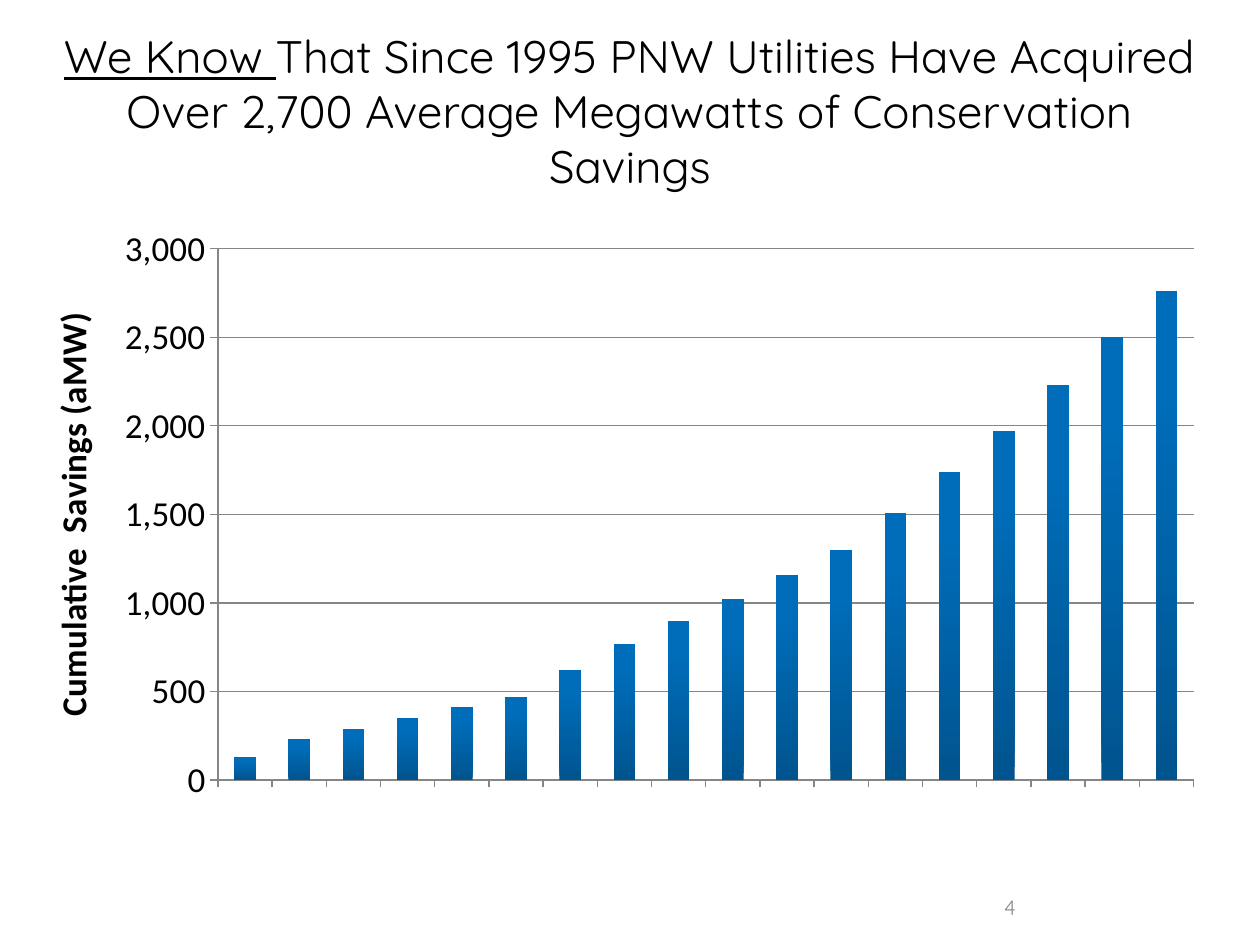
from copy import deepcopy
from typing import NamedTuple

from pptx import Presentation
from pptx.chart.data import CategoryChartData
from pptx.dml.color import RGBColor
from pptx.enum.chart import XL_CHART_TYPE, XL_TICK_LABEL_POSITION, XL_TICK_MARK
from pptx.enum.text import MSO_ANCHOR, PP_ALIGN
from pptx.oxml import parse_xml
from pptx.oxml.ns import nsdecls
from pptx.util import Inches, Pt

BLACK = RGBColor(0x00, 0x00, 0x00)
WHITE = RGBColor(0xFF, 0xFF, 0xFF)
GRAY = RGBColor(0x8C, 0x8C, 0x8C)
RULE = RGBColor(0x86, 0x86, 0x86)
STOPS = (
    (0.0, RGBColor(0x00, 0x54, 0x8F)),
    (0.8, RGBColor(0x00, 0x6D, 0xBA)),
    (1.0, RGBColor(0x00, 0x6D, 0xBB)),
)
YEARS = range(1995, 2013)
SAVINGS = (130, 230, 290, 350, 410, 470, 620, 770, 900,
           1020, 1160, 1300, 1510, 1740, 1970, 2230, 2500, 2760)


class Box(NamedTuple):
    left: float
    top: float
    width: float
    height: float


class Part(NamedTuple):
    text: str
    line: bool = False


def add_text(slide, box: Box, parts: list[Part], size: float,
             color: RGBColor, align: PP_ALIGN) -> None:
    frame = slide.shapes.add_textbox(*map(Inches, box)).text_frame
    frame.word_wrap = True
    frame.vertical_anchor = MSO_ANCHOR.MIDDLE
    para = frame.paragraphs[0]
    para.alignment = align
    for part in parts:
        run = para.add_run()
        run.text = part.text
        run.font.name = "Quicksand"
        run.font.size = Pt(size)
        run.font.color.rgb = color
        run.font.underline = part.line


def fill_bars(fill) -> None:
    """Shade the bars from dark at the foot to light at the top."""
    fill.gradient()
    fill.gradient_angle = 90
    first = fill.gradient_stops[0]._gs
    first.addnext(deepcopy(first))
    for stop, (place, color) in zip(fill.gradient_stops, STOPS):
        stop.position = place
        stop.color.rgb = color


def place_plot(chart, box: Box) -> None:
    """Fix the inner plot area, as shares of the chart, on a white ground."""
    area = chart._chartSpace.chart.plotArea
    for old in area.findall("{*}layout"):
        area.remove(old)
    names = ("x", "y", "w", "h")
    sizes = "".join(f'<c:{n} val="{v}"/>' for n, v in zip(names, box))
    area.insert(0, parse_xml(
        f'<c:layout {nsdecls("c")}><c:manualLayout><c:layoutTarget val="inner"/>'
        f'<c:xMode val="edge"/><c:yMode val="edge"/>{sizes}'
        '</c:manualLayout></c:layout>'))
    area.append(parse_xml(
        f'<c:spPr {nsdecls("c", "a")}><a:solidFill><a:srgbClr val="{WHITE}"/>'
        '</a:solidFill></c:spPr>'))


def add_bars(slide, box: Box) -> None:
    data = CategoryChartData(number_format="#,##0")
    data.categories = [str(year) for year in YEARS]
    data.add_series("Series 1", SAVINGS)
    chart = slide.shapes.add_chart(
        XL_CHART_TYPE.COLUMN_STACKED, *map(Inches, box), data).chart
    chart.has_legend = False
    chart.has_title = False
    chart.font.name = "Calibri"
    chart.font.size = Pt(18)
    chart.font.color.rgb = BLACK

    plot = chart.plots[0]
    plot.gap_width = 150
    plot.overlap = 100
    plot.vary_by_categories = False
    fill_bars(plot.series[0].format.fill)

    years, scale = chart.category_axis, chart.value_axis
    for axis in (years, scale):
        axis.major_tick_mark = XL_TICK_MARK.OUTSIDE
        axis.format.line.color.rgb = RULE
        axis.format.line.width = Pt(0.75)
    years.tick_label_position = XL_TICK_LABEL_POSITION.NONE

    scale.minimum_scale, scale.maximum_scale, scale.major_unit = 0, 3000, 500
    scale.has_major_gridlines = True
    scale.major_gridlines.format.line.color.rgb = RULE
    scale.major_gridlines.format.line.width = Pt(0.75)
    scale.tick_labels.number_format = "#,##0"
    scale.tick_labels.number_format_is_linked = False
    scale.tick_labels.font.size = Pt(20)
    run = scale.axis_title.text_frame.paragraphs[0].add_run()
    run.text = "Cumulative  Savings (aMW)"
    run.font.name = "Calibri"
    run.font.size = Pt(20)
    run.font.bold = True
    run.font.color.rgb = BLACK
    place_plot(chart, Box(0.15, 0.06, 0.83, 0.83))


def main() -> None:
    deck = Presentation()
    deck.slide_width, deck.slide_height = Inches(10), Inches(7.5)
    slide = deck.slides.add_slide(deck.slide_layouts[6])
    add_text(slide, Box(5.83, 7, 2.33, 0.4), [Part("4")], 12, GRAY, PP_ALIGN.RIGHT)
    add_bars(slide, Box(0.33, 1.67, 9.33, 5.08))
    title = [
        Part("We Know ", True),
        Part("That Since 1995 PNW Utilities Have Acquired Over 2,700 "
             "Average Megawatts of Conservation Savings"),
    ]
    add_text(slide, Box(0.25, 0.25, 9.5, 1.25), title, 26, BLACK, PP_ALIGN.CENTER)
    deck.save("out.pptx")


if __name__ == "__main__":
    main()
